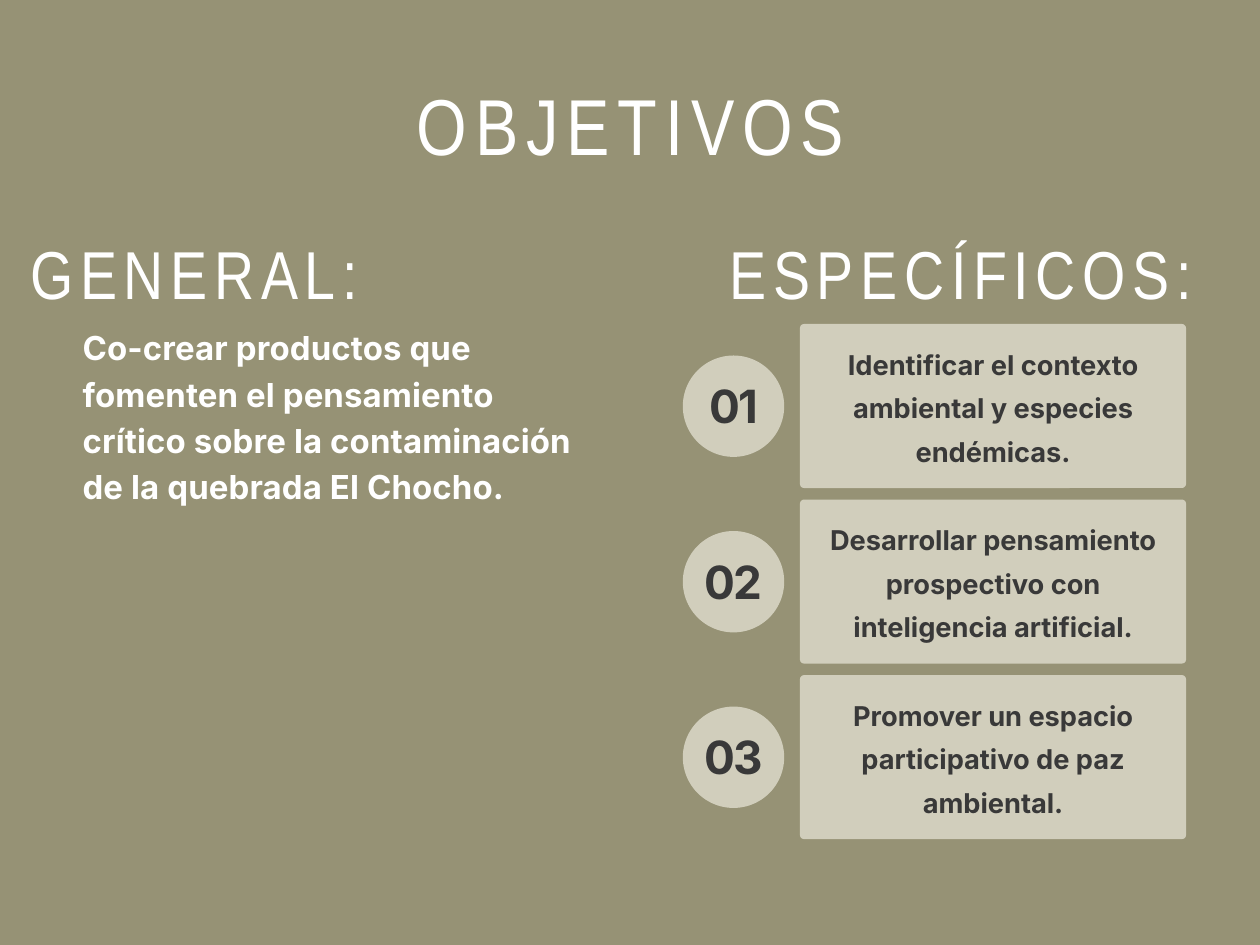
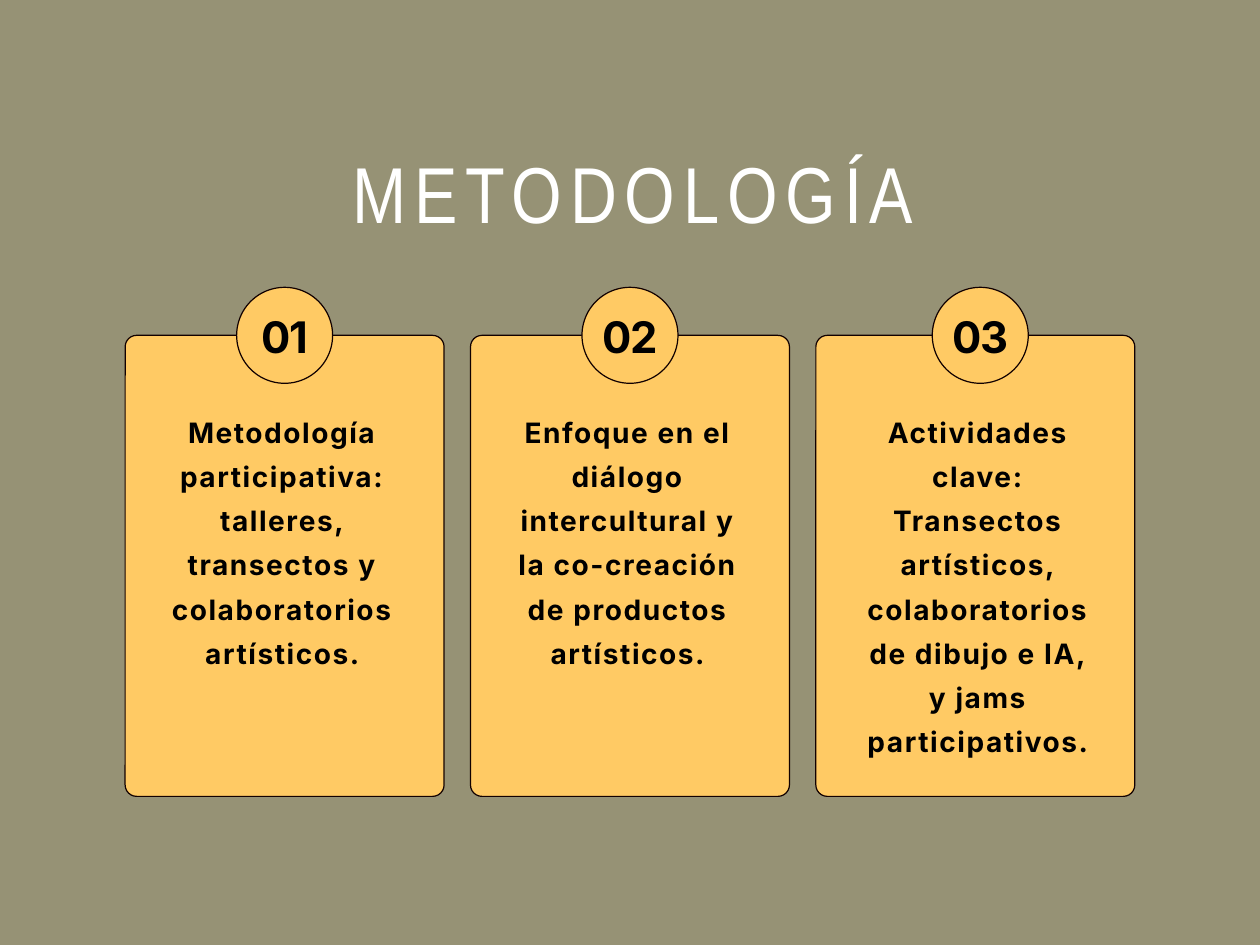
"""Build the two slides on the project's objectives and methodology."""
import pptx
import pptx.dml.color
import pptx.enum.shapes
import pptx.enum.text
import pptx.util

SLIDE_WIDTH, SLIDE_HEIGHT = 768, 576
OLIVE, SAND, AMBER = "969275", "D1CEBC", "FFCA64"
WHITE, CHARCOAL, BLACK, OUTLINE = "FFFFFF", "393939", "000000", "110000"

ROUNDED = pptx.enum.shapes.MSO_SHAPE.ROUNDED_RECTANGLE
OVAL = pptx.enum.shapes.MSO_SHAPE.OVAL
LEFT = pptx.enum.text.PP_ALIGN.LEFT
CENTER = pptx.enum.text.PP_ALIGN.CENTER


def text_style(name, size, color, leading, spacing=0, bold=False, align=CENTER):
    """Gather the format values of one kind of text."""
    return {
        "font": {"name": name, "size": pptx.util.Pt(size), "bold": bold},
        "para": {"alignment": align, "line_spacing": pptx.util.Pt(leading)},
        "color": color,
        "spacing": spacing,
    }


TITLE = text_style("Arial Narrow", 48.3, WHITE, 67.6, 4.8)
HEADING = text_style("Arial Narrow", 41.3, WHITE, 57.8, 4.1)
GENERAL = text_style("Inter", 20.1, WHITE, 28.2, 0.1, True, LEFT)
SPECIFIC = text_style("Inter", 16.6, CHARCOAL, 26.6, 0, True)
METHOD = text_style("Inter", 17.1, BLACK, 26.9, 1, True)
SPECIFIC_NUMBER = text_style("Inter", 27.9, CHARCOAL, 33.5, -1, True)
METHOD_NUMBER = text_style("Inter", 26.5, BLACK, 31.8, -0.9, True)

SPECIFIC_GOALS = [
    "Identificar el contexto ambiental y especies endémicas.",
    "Desarrollar pensamiento prospectivo con inteligencia artificial.",
    "Promover un espacio participativo de paz ambiental.",
]
METHODS = [
    ("Metodología participativa: talleres, transectos y colaboratorios artísticos.", 160, 0),
    ("Enfoque en el diálogo intercultural y la co-creación de productos artísticos.", 160, 0),
    ("Actividades clave: Transectos artísticos, colaboratorios de dibujo e IA, "
     "y jams participativos.", 214, 3),
]


def hex_color(value):
    """Turn a hex string into a colour."""
    return pptx.dml.color.RGBColor.from_string(value)


def points(*lengths):
    """Turn numbers into lengths in points."""
    return [pptx.util.Pt(length) for length in lengths]


def apply(target, values):
    """Set each attribute named in a dict of format values."""
    for name, value in values.items():
        setattr(target, name, value)


def add_text(page, box, words, style):
    """Write one paragraph in a text box without margins."""
    frame = page.shapes.add_textbox(*points(*box)).text_frame
    apply(frame, {
        "margin_left": 0, "margin_top": 0, "margin_right": 0, "margin_bottom": 0,
        "word_wrap": True,
        "auto_size": pptx.enum.text.MSO_AUTO_SIZE.SHAPE_TO_FIT_TEXT,
    })
    para = frame.paragraphs[0]
    apply(para, style["para"])
    span = para.add_run()
    span.text = words
    apply(span.font, style["font"])
    span.font.color.rgb = hex_color(style["color"])
    span._r.get_or_add_rPr().set("spc", str(round(style["spacing"] * 100)))


def add_plate(page, kind, box, fill, line=None, radius=None):
    """Draw a flat filled shape, outlined when a line colour is given."""
    plate = page.shapes.add_shape(kind, *points(*box))
    plate.shadow.inherit = False
    plate.fill.solid()
    plate.fill.fore_color.rgb = hex_color(fill)
    if line:
        plate.line.color.rgb = hex_color(line)
        plate.line.width = pptx.util.Pt(0.75)
    else:
        plate.line.fill.background()
    if radius:
        plate.adjustments[0] = radius / min(box[2:])


def add_badge(page, box, number, style, fill, line=None):
    """Draw a numbered circle."""
    left, top, width, height = box
    add_plate(page, OVAL, box, fill, line)
    add_text(page, (left, top + 13.7, width, height - 27.4), f"{number:02d}", style)


def add_goal(page, box, number, words):
    """Place a specific goal: its circle, then its card."""
    left, top, width, height = box
    card_left, card_width = left + 71.4, width - 71.4
    add_plate(page, ROUNDED, (card_left, top, card_width, height), SAND, radius=2.5)
    add_text(page, (card_left + 16.5, top + 7.9, card_width - 33, 77.8), words, SPECIFIC)
    add_badge(page, (left, top + 19.2, 61.8, 61.8), number, SPECIFIC_NUMBER, SAND)


def add_method(page, box, number, words, text_height, shift):
    """Place a method card with a circle on its top edge."""
    left, top, width, height = box
    size = 58.5
    add_plate(page, ROUNDED, box, AMBER, OUTLINE, 7)
    badge = (left + (width - size) / 2 + shift, top - size / 2, size, size)
    add_badge(page, badge, number, METHOD_NUMBER, AMBER, OUTLINE)
    add_text(page, (left + 24.5 + shift, top + 42.5, 142.6, text_height), words, METHOD)


def add_page(deck, title, title_left, title_top):
    """Add a blank olive page with its title."""
    page = deck.slides.add_slide(deck.slide_layouts[6])
    page.background.fill.solid()
    page.background.fill.fore_color.rgb = hex_color(OLIVE)
    add_text(page, (title_left, title_top, 420.5, 65.5), title, TITLE)
    return page


def build_objectives(deck):
    """Build the page with the general and specific objectives."""
    page = add_page(deck, "OBJETIVOS", 174.2, 36.7)
    for left, heading in ((-32.4, "GENERAL:"), (434.9, "ESPECÍFICOS:")):
        add_text(page, (left, 133.2, 301.7, 56.2), heading, HEADING)
    add_text(page, (50.4, 195.8, 316, 134), "Co-crear productos que fomenten el pensamiento "
             "crítico sobre la contaminación de la quebrada El Chocho.", GENERAL)
    for index, words in enumerate(SPECIFIC_GOALS):
        add_goal(page, (416.2, 197.5 + index * 107, 306.8, 100), index + 1, words)


def build_methodology(deck):
    """Build the page with the three method cards."""
    page = add_page(deck, "METODOLOGÍA", 175.7, 78.5)
    for index, method in enumerate(METHODS):
        add_method(page, (76.3 + index * 210.5, 204.4, 194.4, 281), index + 1, *method)


def main():
    """Build and save the deck."""
    deck = pptx.Presentation()
    deck.slide_width, deck.slide_height = points(SLIDE_WIDTH, SLIDE_HEIGHT)
    build_objectives(deck)
    build_methodology(deck)
    deck.save("out.pptx")


if __name__ == "__main__":
    main()
